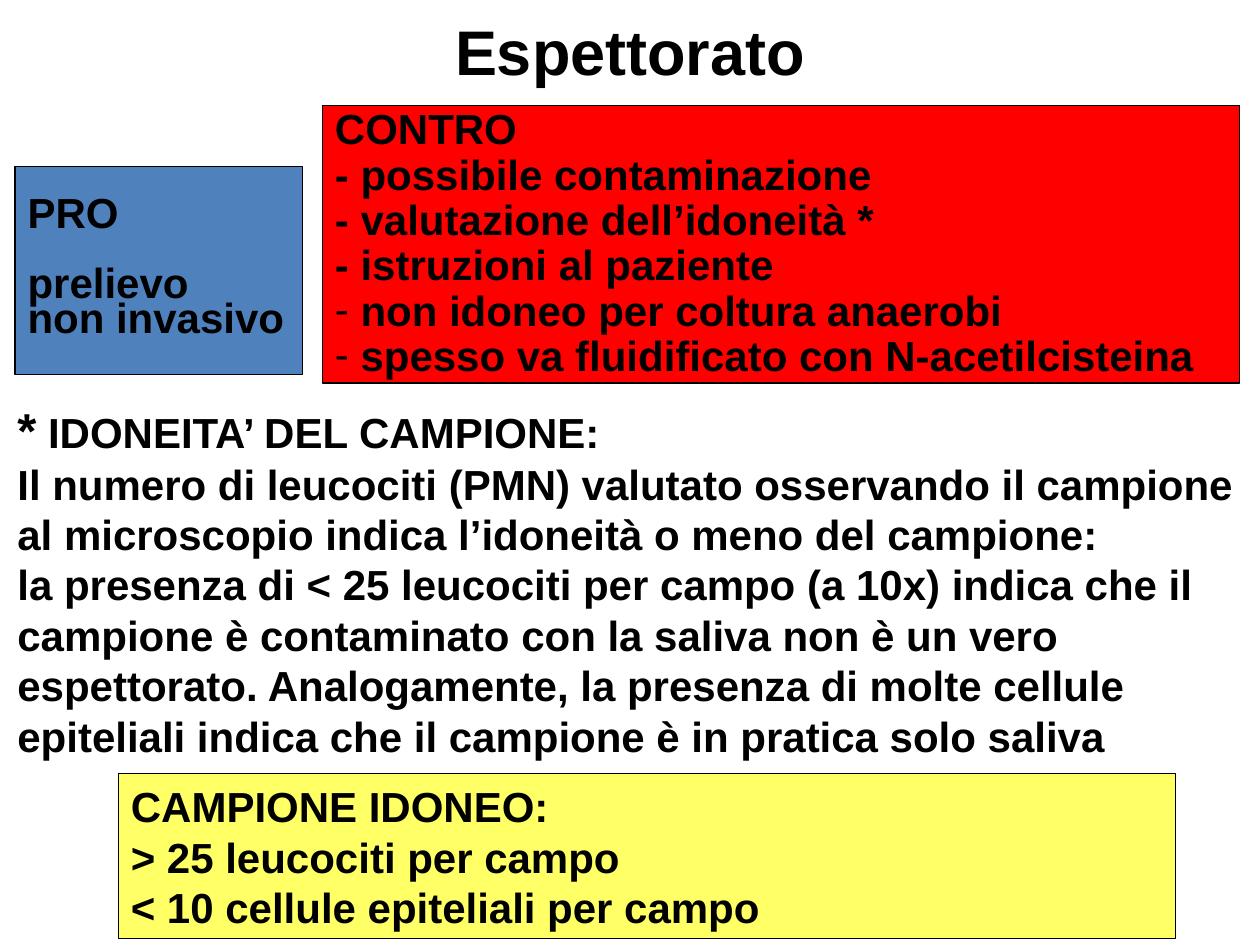
from pptx import Presentation
from pptx.dml.color import RGBColor
from pptx.enum.shapes import MSO_SHAPE
from pptx.enum.text import MSO_ANCHOR, PP_ALIGN
from pptx.oxml.ns import qn
from pptx.util import Inches, Pt
from lxml.etree import SubElement

BLACK = RGBColor(0x00, 0x00, 0x00)
BLUE = RGBColor(0x4F, 0x81, 0xBD)
RED = RGBColor(0xFF, 0x00, 0x00)
YELLOW = RGBColor(0xFF, 0xFF, 0x66)

FONT = {"name": "Arial", "size": Pt(24), "bold": True}


def add_span(para, text, **changes):
    """Add a run in the slide's font, with any changes given."""
    span = para.add_run()
    span.text = text
    for name, value in (FONT | changes).items():
        setattr(span.font, name, value)
    span.font.color.rgb = BLACK


def add_paragraphs(frame, lines, **formats):
    """Fill a text frame with one formatted paragraph per line."""
    for index, line in enumerate(lines):
        para = frame.paragraphs[0] if index == 0 else frame.add_paragraph()
        for name, value in ({"alignment": PP_ALIGN.LEFT} | formats).items():
            setattr(para, name, value)
        add_span(para, line)


def add_dash_bullet(para):
    """Give a paragraph a dash as its bullet."""
    properties = para._p.get_or_add_pPr()
    SubElement(properties, qn("a:buFont"), typeface="Arial")
    SubElement(properties, qn("a:buChar"), char="-")


def add_text(page, left, top, width, height):
    """Add a wrapping text box and return its text frame."""
    box = page.shapes.add_textbox(
        Inches(left), Inches(top), Inches(width), Inches(height))
    box.text_frame.word_wrap = True
    return box.text_frame


def add_panel(page, left, top, width, height, fill):
    """Add a filled, outlined rectangle and return its text frame."""
    panel = page.shapes.add_shape(
        MSO_SHAPE.RECTANGLE,
        Inches(left), Inches(top), Inches(width), Inches(height))
    panel.shadow.inherit = False
    panel.fill.solid()
    panel.fill.fore_color.rgb = fill
    panel.line.color.rgb = BLACK
    panel.line.width = Pt(0.75)
    frame = panel.text_frame
    frame.word_wrap = True
    frame.vertical_anchor = MSO_ANCHOR.MIDDLE
    return frame


def add_pros(page):
    """Add the panel of advantages."""
    frame = add_panel(page, 0.12, 1.32, 2.28, 1.65, BLUE)
    add_paragraphs(frame, ["PRO", "prelievo", "non invasivo"], line_spacing=0.7)
    frame.paragraphs[1].space_before = Pt(20)


def add_cons(page):
    """Add the panel of drawbacks."""
    frame = add_panel(page, 2.56, 0.84, 7.28, 2.2, RED)
    add_paragraphs(frame, [
        "CONTRO",
        "- possibile contaminazione",
        "- valutazione dell’idoneità *",
        "- istruzioni al paziente",
        " non idoneo per coltura anaerobi",
        " spesso va fluidificato con N-acetilcisteina",
    ], line_spacing=0.9)
    for para in frame.paragraphs[-2:]:
        add_dash_bullet(para)


def add_suitability(page):
    """Add the explanation of sample suitability."""
    frame = add_text(page, 0.04, 3.12, 9.96, 2.96)
    heading = frame.paragraphs[0]
    add_span(heading, "*", size=Pt(28))
    add_span(heading, " IDONEITA’ DEL CAMPIONE:")
    for line in (
        "Il numero di leucociti (PMN) valutato osservando il campione "
        "al microscopio indica l’idoneità o meno del campione:",
        "la presenza di < 25 leucociti per campo (a 10x) indica che il "
        "campione è contaminato con la saliva non è un vero espettorato. "
        "Analogamente, la presenza di molte cellule epiteliali indica che "
        "il campione è in pratica solo saliva",
    ):
        add_span(frame.add_paragraph(), line)


def main():
    """Build and save the slide."""
    deck = Presentation()
    deck.slide_width, deck.slide_height = Inches(10), Inches(7.5)
    page = deck.slides.add_slide(deck.slide_layouts[6])

    title = add_text(page, 2.24, 0.05, 5.52, 0.7)
    title.paragraphs[0].alignment = PP_ALIGN.CENTER
    add_span(title.paragraphs[0], "Espettorato", size=Pt(36))
    add_pros(page)
    add_cons(page)
    add_suitability(page)
    add_paragraphs(add_panel(page, 0.94, 6.14, 8.39, 1.31, YELLOW), [
        "CAMPIONE IDONEO:",
        "> 25 leucociti per campo",
        "< 10 cellule epiteliali per campo",
    ])
    deck.save("out.pptx")


if __name__ == "__main__":
    main()
